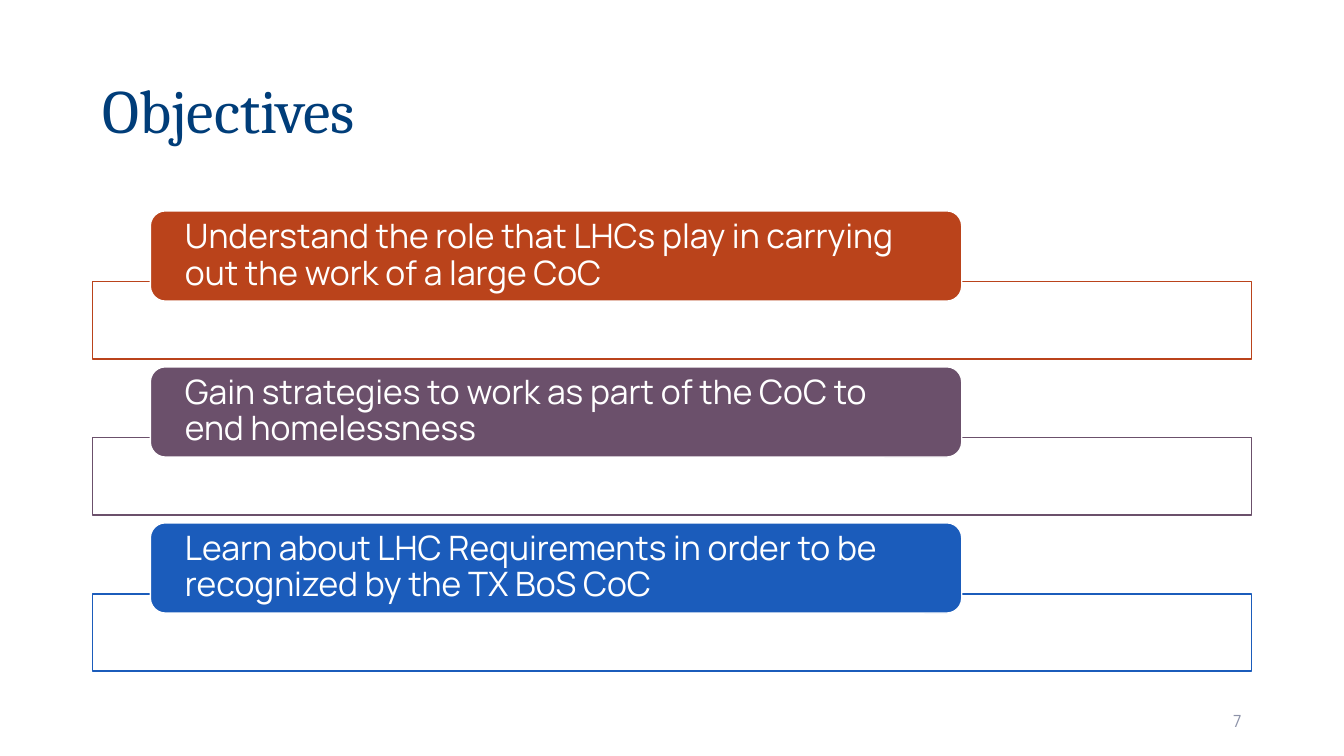
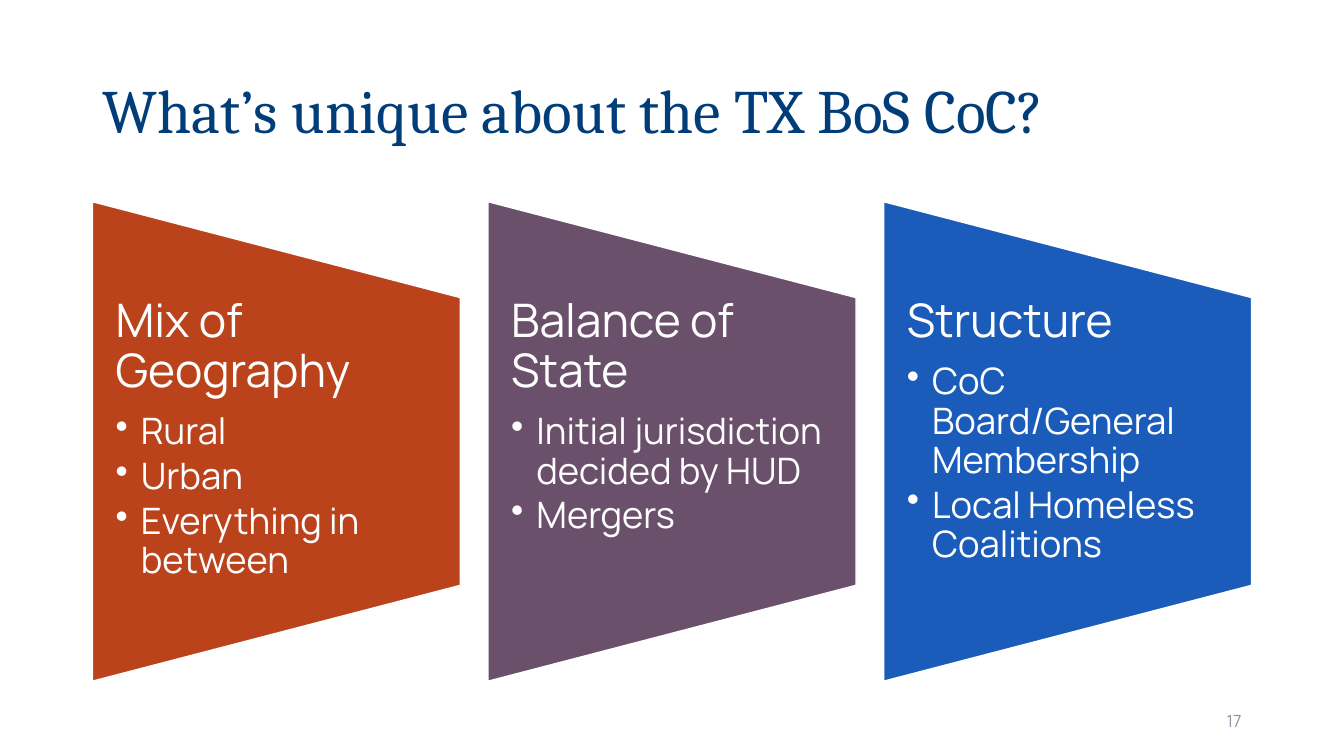
from pptx import Presentation
from pptx.dml.color import RGBColor
from pptx.enum.shapes import MSO_SHAPE as Kind
from pptx.enum.text import MSO_ANCHOR as Anchor, PP_ALIGN as Align
from pptx.oxml.ns import qn
from pptx.util import Inches, Pt
from lxml.etree import SubElement as Sub

COLS, ROWS = 160, 90
LEFT, SPAN = 11, 138
WHITE, NAVY, GREY = "FFFFFF", "003D79", "8C92A8"
HUES = ["BA431B", "6B506B", "1B5CBB"]
HEAD, BODY = "Cambria", "Manrope"


def hue(code):
    return RGBColor.from_string(code)


class Deck:
    """Holds the shared style and the current slide, measured in grid units."""

    def __init__(self):
        self.prs = Presentation()
        self.prs.slide_width = Inches(13.33)
        self.prs.slide_height = Inches(7.5)
        self.slide = None

    def grid(self, x, y, w, h):
        col = self.prs.slide_width / COLS
        row = self.prs.slide_height / ROWS
        return [round(n) for n in (x * col, y * row, w * col, h * row)]

    def page(self, title, num):
        self.slide = self.prs.slides.add_slide(self.prs.slide_layouts[6])
        head = self.text(LEFT, 4.8, SPAN, 17.4, Anchor.MIDDLE)
        self.line(head, title, 44, NAVY, HEAD)
        foot = self.text(113, 83.4, 36, 4.8, Anchor.MIDDLE)
        para = self.line(foot, num, 12, GREY)
        para.alignment, para.line_spacing = Align.RIGHT, 1.0

    def text(self, x, y, w, h, anchor=Anchor.TOP):
        frame = self.slide.shapes.add_textbox(*self.grid(x, y, w, h)).text_frame
        frame.word_wrap = True
        frame.vertical_anchor = anchor
        return frame

    def inset(self, frame, side):
        frame.margin_left = frame.margin_right = Inches(side)
        frame.margin_top = frame.margin_bottom = 0

    def shape(self, kind, x, y, w, h, fill, edge):
        shape = self.slide.shapes.add_shape(kind, *self.grid(x, y, w, h))
        shape.shadow.inherit = False
        shape.fill.solid()
        shape.fill.fore_color.rgb = hue(fill)
        shape.line.color.rgb = hue(edge)
        shape.line.width = Pt(1)
        return shape

    def line(self, frame, words, size, color, font=BODY, after=0, dot=False):
        para = frame.paragraphs[0] if not frame.text else frame.add_paragraph()
        para.text = words
        para.alignment = Align.LEFT
        para.line_spacing = 0.9
        para.space_after = Pt(after)
        if dot:
            props = para._p.get_or_add_pPr()
            props.set("marL", str(Inches(0.25)))
            props.set("indent", str(-Inches(0.25)))
            Sub(props, qn("a:buChar"), char="•")
        for run in para.runs:
            run.font.name, run.font.size = font, Pt(size)
            run.font.color.rgb = hue(color)
        return para

    def goal(self, y, words, color):
        self.shape(Kind.RECTANGLE, LEFT, y, SPAN, 9.2, WHITE, color)
        label = self.shape(Kind.ROUNDED_RECTANGLE, LEFT + SPAN * 0.05, y - 8.45,
                           SPAN * 0.7, 10.75, color, WHITE)
        frame = label.text_frame
        frame.word_wrap = True
        frame.vertical_anchor = Anchor.MIDDLE
        self.inset(frame, 0.3)
        self.line(frame, words, 24, WHITE)

    def panel(self, x, w, head, items, color):
        mid, tall = 52.55, 57.1
        form = self.shape(Kind.FLOWCHART_MANUAL_OPERATION, x + (w - tall) / 2,
                          mid - w / 2, tall, w, color, WHITE)
        form.rotation = 270
        frame = self.text(x, mid - tall * 0.3, w, tall * 0.6)
        self.inset(frame, 0.23)
        self.line(frame, head, 33, WHITE, after=11.5)
        for item in items:
            self.line(frame, item, 26, WHITE, after=3.9, dot=True)


def main():
    deck = Deck()

    deck.page("Objectives", "7")
    goals = [
        "Understand the role that LHCs play in carrying out the work of a large CoC",
        "Gain strategies to work as part of the CoC to end homelessness",
        "Learn about LHC Requirements in order to be recognized by the TX BoS CoC",
    ]
    for i, (words, color) in enumerate(zip(goals, HUES)):
        deck.goal(33.55 + i * 18.57, words, color)

    deck.page("What’s unique about the TX BoS CoC?", "17")
    panels = [
        ("Mix of Geography", ["Rural", "Urban", "Everything in between"]),
        ("Balance of State", ["Initial jurisdiction decided by HUD", "Mergers"]),
        ("Structure", ["CoC Board/General Membership", "Local Homeless Coalitions"]),
    ]
    gap = 3.3
    wide = (SPAN - gap * (len(panels) - 1)) / len(panels)
    for i, ((head, items), color) in enumerate(zip(panels, HUES)):
        deck.panel(LEFT + i * (wide + gap), wide, head, items, color)

    deck.prs.save("out.pptx")


if __name__ == "__main__":
    main()
